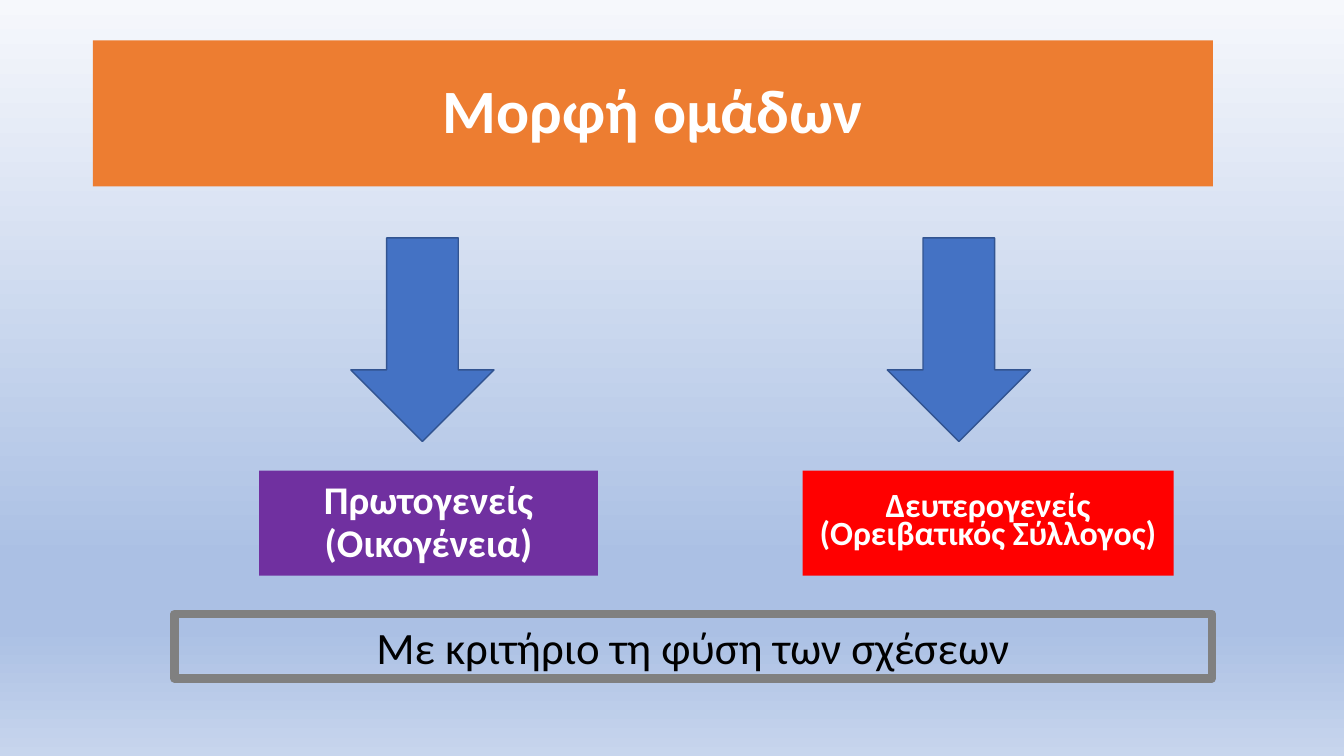
from lxml.etree import SubElement
from pptx import Presentation
from pptx.dml.color import RGBColor
from pptx.enum.shapes import MSO_SHAPE
from pptx.enum.text import MSO_ANCHOR, MSO_AUTO_SIZE, PP_ALIGN
from pptx.oxml.ns import qn
from pptx.util import Inches, Pt

HUES = {
    "title": "ED7D31", "arrow": "4472C4", "edge": "325491",
    "first": "7030A0", "second": "FF0000", "frame": "808080",
    "light": "FFFFFF", "dark": "000000",
}
STOPS = [(0, "F6F8FC"), (74, "ABC0E4"), (83, "ABC0E4"), (100, "C7D5ED")]


def tint(name):
    return RGBColor.from_string(HUES[name])


def place(shape, box):
    shape.left, shape.top, shape.width, shape.height = map(Inches, box)


def write(shape, text, size, hue="light", bold=True, pitch=0.9):
    frame = shape.text_frame
    frame.text = text
    frame.word_wrap = True
    frame.auto_size = MSO_AUTO_SIZE.NONE
    frame.vertical_anchor = MSO_ANCHOR.MIDDLE
    for para in frame.paragraphs:
        para.alignment = PP_ALIGN.CENTER
        para.line_spacing = pitch
        para.space_before = Pt(0)
        for run in para.runs:
            font = run.font
            font.name, font.size, font.bold = "Calibri", Pt(size), bold
            font.color.rgb = tint(hue)


def paint(shape, name):
    shape.fill.solid()
    shape.fill.fore_color.rgb = tint(name)


def shade(slide):
    fill = slide.background.fill
    fill.gradient()
    fill.gradient_angle = 270
    stops = slide.element.find(".//" + qn("a:gsLst"))
    for stop in list(stops):
        stops.remove(stop)
    for share, hue in STOPS:
        stop = SubElement(stops, qn("a:gs"), pos=str(share * 1000))
        SubElement(stop, qn("a:srgbClr"), val=hue)


def add_title(slide, box):
    title = slide.shapes.title
    place(title, box)
    paint(title, "title")
    write(title, "Μορφή ομάδων", 44)


def add_group(slide, slot, box, shift, hue, text, size, pitch):
    left, top, width, height = box
    arrow = slide.shapes.add_shape(
        MSO_SHAPE.DOWN_ARROW, Inches(left + shift), Inches(top),
        Inches(1.42), Inches(2.02))
    arrow.shadow.inherit = False
    paint(arrow, "arrow")
    arrow.line.color.rgb = tint("edge")
    arrow.line.width = Pt(1)

    label = slide.placeholders[slot]
    place(label, (left, top + height - 1.04, width, 1.04))
    paint(label, hue)
    write(label, text, size, pitch=pitch)
    for para in label.text_frame.paragraphs:
        props = para._p.get_or_add_pPr()
        props.set("marL", "0")
        props.set("indent", "0")
        SubElement(props, qn("a:buNone"))


def add_note(slide, box):
    note = slide.shapes.add_shape(MSO_SHAPE.RECTANGLE, *map(Inches, box))
    note.shadow.inherit = False
    note.fill.background()
    note.line.color.rgb = tint("frame")
    note.line.width = Pt(6)
    SubElement(note.line._get_or_add_ln(), qn("a:round"))
    write(note, "Με κριτήριο τη φύση των σχέσεων", 32, "dark", False, 1)


def main():
    deck = Presentation()
    deck.slide_width, deck.slide_height = Inches(13.33), Inches(7.5)
    slide = deck.slides.add_slide(deck.slide_layouts[3])
    shade(slide)
    add_title(slide, (0.92, 0.4, 11.11, 1.45))
    add_group(slide, 1, (2.57, 2.36, 3.36, 3.35), 0.91, "first",
              "Πρωτογενείς\n(Οικογένεια)", 28, 0.9)
    add_group(slide, 2, (7.96, 2.36, 3.68, 3.35), 0.84, "second",
              "Δευτερογενείς\n(Ορειβατικός Σύλλογος)", 24.2, 0.7)
    add_note(slide, (1.73, 6.09, 10.29, 0.64))
    deck.save("out.pptx")


if __name__ == "__main__":
    main()
